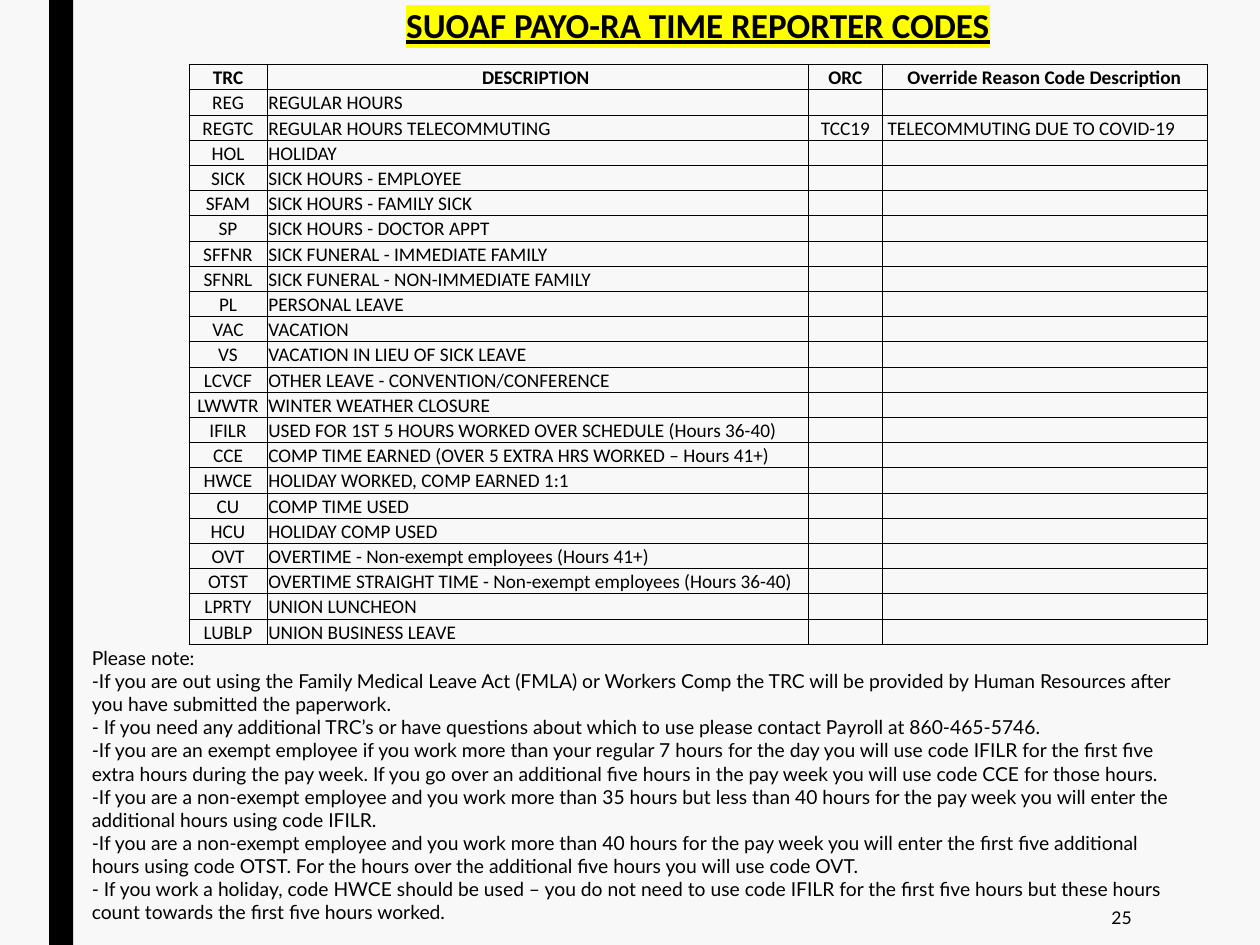
from lxml import etree
from pptx import Presentation
from pptx.dml.color import RGBColor
from pptx.enum import shapes, text
from pptx.oxml import ns
from pptx.util import Inches, Pt

BLACK = RGBColor(0x00, 0x00, 0x00)
PAPER = RGBColor(0xF8, 0xF8, 0xF8)
YELLOW = RGBColor(0xFF, 0xFF, 0x00)

TITLE = "SUOAF PAYO-RA TIME REPORTER CODES"
HEADINGS = ["TRC", "DESCRIPTION ", "ORC", "Override Reason Code Description"]
CODES = [
    ("REG", "REGULAR HOURS"),
    ("REGTC", "REGULAR HOURS TELECOMMUTING", "TCC19", " TELECOMMUTING DUE TO COVID-19"),
    ("HOL", "HOLIDAY"),
    ("SICK", "SICK HOURS - EMPLOYEE"),
    ("SFAM", "SICK HOURS - FAMILY SICK"),
    ("SP", "SICK HOURS - DOCTOR APPT"),
    ("SFFNR", "SICK FUNERAL - IMMEDIATE FAMILY"),
    ("SFNRL", "SICK FUNERAL - NON-IMMEDIATE FAMILY"),
    ("PL", "PERSONAL LEAVE"),
    ("VAC", "VACATION"),
    ("VS", "VACATION IN LIEU OF SICK LEAVE"),
    ("LCVCF", "OTHER LEAVE - CONVENTION/CONFERENCE"),
    ("LWWTR", "WINTER WEATHER CLOSURE"),
    ("IFILR", "USED FOR 1ST 5 HOURS WORKED OVER SCHEDULE (Hours 36-40)"),
    ("CCE", "COMP TIME EARNED (OVER 5 EXTRA HRS WORKED – Hours 41+)"),
    ("HWCE", "HOLIDAY WORKED, COMP EARNED 1:1"),
    ("CU", "COMP TIME USED"),
    ("HCU", "HOLIDAY COMP USED"),
    ("OVT", "OVERTIME - Non-exempt employees (Hours 41+)"),
    ("OTST", "OVERTIME STRAIGHT TIME - Non-exempt employees (Hours 36-40)"),
    ("LPRTY", "UNION LUNCHEON"),
    ("LUBLP", "UNION BUSINESS LEAVE"),
]
NOTES = [
    "Please note:",
    "-If you are out using the Family Medical Leave Act (FMLA) or Workers Comp the TRC will be provided by Human Resources after you have submitted the paperwork.",
    "- If you need any additional TRC’s or have questions about which to use please contact Payroll at 860-465-5746.",
    "-If you are an exempt employee if you work more than your regular 7 hours for the day you will use code IFILR for the first five extra hours during the pay week. If you go over an additional five hours in the pay week you will use code CCE for those hours.",
    "-If you are a non-exempt employee and you work more than 35 hours but less than 40 hours for the pay week you will enter the additional hours using code IFILR.",
    "-If you are a non-exempt employee and you work more than 40 hours for the pay week you will enter the first five additional hours using code OTST. For the hours over the additional five hours you will use code OVT.",
    "- If you work a holiday, code HWCE should be used – you do not need to use code IFILR for the first five hours but these hours count towards the first five hours worked.",
]


def style_text(frame, font, size, bold=False, align=text.PP_ALIGN.LEFT):
    for para in frame.paragraphs:
        para.alignment = align
        for span in para.runs:
            span.font.name = font
            span.font.size = Pt(size)
            span.font.bold = bold
            span.font.color.rgb = BLACK


def set_borders(cell, sides):
    properties = cell._tc.get_or_add_tcPr()
    for side in "LRTB":
        line = etree.SubElement(properties, ns.qn(f"a:ln{side}"), w=str(Pt(0.5)))
        if side in sides:
            fill = etree.SubElement(line, ns.qn("a:solidFill"))
            etree.SubElement(fill, ns.qn("a:srgbClr"), val=str(BLACK))
        else:
            etree.SubElement(line, ns.qn("a:noFill"))


deck = Presentation()
deck.slide_width = Inches(10)
deck.slide_height = Inches(7.5)
page = deck.slides.add_slide(deck.slide_layouts[6])
page.background.fill.solid()
page.background.fill.fore_color.rgb = PAPER

stripe = page.shapes.add_shape(
    shapes.MSO_SHAPE.RECTANGLE, Inches(0.39), 0, Inches(0.19), Inches(7.5))
stripe.shadow.inherit = False
stripe.fill.solid()
stripe.fill.fore_color.rgb = BLACK
stripe.line.fill.background()

number = page.shapes.add_textbox(Inches(7.77), Inches(7.06), Inches(1.31), Inches(0.44))
number.text_frame.text = "25"
number.text_frame.word_wrap = True
number.text_frame.vertical_anchor = text.MSO_ANCHOR.MIDDLE
style_text(number.text_frame, "Lato", 10, align=text.PP_ALIGN.RIGHT)

notes = page.shapes.add_textbox(Inches(0.63), Inches(5.08), Inches(8.92), Inches(2.32))
notes.text_frame.text = "\n".join(NOTES)
notes.text_frame.word_wrap = True
style_text(notes.text_frame, "Lato", 11)

rows = [[TITLE], [], HEADINGS, *CODES]
table = page.shapes.add_table(
    len(rows), 4, Inches(1.5), Inches(0.03), Inches(8.08), Inches(5.08)).table
table.first_row = False
table.horz_banding = False
for column, width in zip(table.columns, [0.62, 4.3, 0.58, 2.58]):
    column.width = Inches(width)
for row, height in zip(table.rows, [0.34, 0.14] + [0.2] * (len(rows) - 2)):
    row.height = Inches(height)
table.cell(0, 0).merge(table.cell(0, 3))

for r, values in enumerate(rows):
    for c in range(4):
        cell = table.cell(r, c)
        cell.margin_left = cell.margin_right = cell.margin_top = Inches(0.01)
        cell.margin_bottom = 0
        cell.vertical_anchor = text.MSO_ANCHOR.BOTTOM
        set_borders(cell, ["", "B"][r] if r < 2 else "LRTB")
        cell.fill.background()
        if c < len(values):
            cell.text_frame.text = values[c]
            centred = r <= 2 or c in (0, 2)
            align = text.PP_ALIGN.CENTER if centred else text.PP_ALIGN.LEFT
            style_text(cell.text_frame, "Calibri", 20 if r == 0 else 11, r <= 2, align)
        else:
            etree.SubElement(cell.text_frame.paragraphs[0]._p, ns.qn("a:endParaRPr"), sz="600")

title_span = table.cell(0, 0).text_frame.paragraphs[0].runs[0]
title_span.font.underline = True
highlight = etree.Element(ns.qn("a:highlight"))
etree.SubElement(highlight, ns.qn("a:srgbClr"), val=str(YELLOW))
title_span._r.rPr.find(ns.qn("a:latin")).addprevious(highlight)

deck.save("out.pptx")
